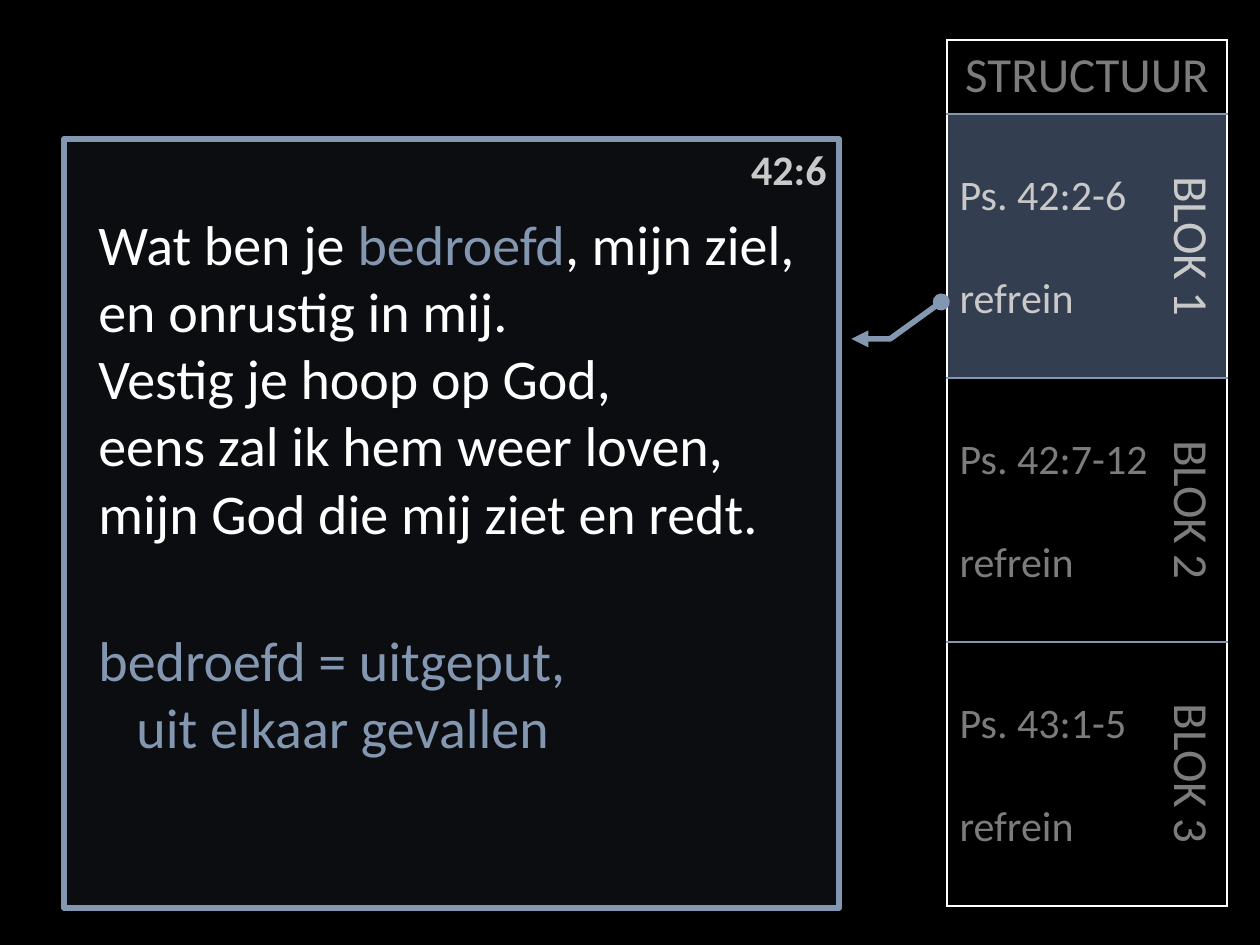
from dataclasses import dataclass
from typing import Optional

from lxml.etree import SubElement
from pptx import Presentation
from pptx.dml.color import RGBColor
from pptx.enum.shapes import MSO_SHAPE
from pptx.enum.text import MSO_ANCHOR, PP_ALIGN
from pptx.oxml.ns import qn
from pptx.util import Emu, Pt


@dataclass(frozen=True)
class Theme:
    font: str = "Calibri"
    back: str = "000000"
    white: str = "FFFFFF"
    blue: str = "8497B0"
    panel: str = "222A35"
    block: str = "333F50"
    light: str = "C9C9C9"
    dim: str = "7C7C7C"
    small: int = 24
    label: int = 28
    verse: int = 32
    rule: float = 1
    frame: float = 3.25


@dataclass(frozen=True)
class Box:
    left: int
    top: int
    width: int
    height: int

    def place(self) -> tuple:
        return px(self.left), px(self.top), px(self.width), px(self.height)


@dataclass(frozen=True)
class Line:
    words: tuple
    size: int
    color: str
    align: Optional[PP_ALIGN] = None
    bold: bool = False
    indent: int = 0
    gap: float = 0


@dataclass(frozen=True)
class Block:
    name: str
    psalm: str
    color: str
    fill: Optional[str] = None


THEME = Theme()
BLOCKS = (
    Block("BLOK 1", "Ps. 42:2-6", THEME.light, THEME.block),
    Block("BLOK 2", "Ps. 42:7-12", THEME.dim),
    Block("BLOK 3", "Ps. 43:1-5", THEME.dim),
)
VERSE = (
    ("Wat ben je ", ("bedroefd", THEME.blue), ", mijn ziel,"),
    ("en onrustig in mij.",),
    ("Vestig je hoop op God,",),
    ("eens zal ik hem weer loven,",),
    ("mijn God die mij ziet en redt.",),
)
HEAD, ROW = 74, 264
COLS = (223, 57)


def px(count: int) -> Emu:
    return Emu(round(count * 914400 / 126))


def rgb(code: str) -> RGBColor:
    return RGBColor.from_string(code)


def write(frame, lines: list[Line]) -> None:
    for i, line in enumerate(lines):
        para = frame.add_paragraph() if i else frame.paragraphs[0]
        if line.indent:
            para._p.get_or_add_pPr().set("marL", str(px(line.indent)))
        if line.align is not None:
            para.alignment = line.align
        if line.gap:
            para.space_before = Pt(line.gap)
        font = para.font
        font.name, font.size, font.bold = THEME.font, Pt(line.size), line.bold
        font.color.rgb = rgb(line.color)
        for word in line.words:
            run = para.add_run()
            if isinstance(word, tuple):
                run.text = word[0]
                run.font.color.rgb = rgb(word[1])
            else:
                run.text = word


def add_text(slide, box: Box, lines: list[Line]) -> None:
    frame = slide.shapes.add_textbox(*box.place()).text_frame
    frame.word_wrap = True
    write(frame, lines)


def style(cell, edges: dict, fill: Optional[str] = None) -> None:
    props = cell._tc.get_or_add_tcPr()
    for side in "LRTB":
        edge = SubElement(props, qn(f"a:ln{side}"), w=str(Pt(THEME.rule)))
        if side in edges:
            paint = SubElement(edge, qn("a:solidFill"))
            SubElement(paint, qn("a:srgbClr"), val=edges[side])
        else:
            SubElement(edge, qn("a:noFill"))
    if fill:
        cell.fill.solid()
        cell.fill.fore_color.rgb = rgb(fill)
    else:
        cell.fill.background()


def add_table(slide) -> None:
    box = Box(947, 40, sum(COLS), HEAD + ROW * len(BLOCKS))
    table = slide.shapes.add_table(len(BLOCKS) + 1, 2, *box.place()).table
    table.first_row = table.horz_banding = False
    for col, width in zip(table.columns, COLS):
        col.width = px(width)
    for i, row in enumerate(table.rows):
        row.height = px(ROW if i else HEAD)

    title = table.cell(0, 0)
    title.merge(table.cell(0, 1))
    write(title.text_frame, [Line(("STRUCTUUR",), THEME.label, THEME.dim, PP_ALIGN.CENTER)])
    ends = {"T": THEME.white, "B": THEME.blue}
    style(title, {"L": THEME.white, "R": THEME.white, **ends})
    style(table.cell(0, 1), {"R": THEME.white, **ends})

    for i, block in enumerate(BLOCKS, 1):
        last = i == len(BLOCKS)
        ends = {"T": THEME.blue, "B": THEME.white if last else THEME.blue}
        left, right = table.cell(i, 0), table.cell(i, 1)
        left.margin_top = px(57)
        write(left.text_frame, [
            Line((block.psalm,), THEME.small, block.color),
            Line(("refrein",), THEME.small, block.color, gap=29.3),
        ])
        style(left, {"L": THEME.white, **ends}, block.fill)
        right.vertical_anchor = MSO_ANCHOR.MIDDLE
        right._tc.get_or_add_tcPr().set("vert", "vert")
        write(right.text_frame, [Line((block.name,), THEME.label, block.color, PP_ALIGN.CENTER)])
        style(right, {"R": THEME.white, **ends}, block.fill)


def add_panel(slide) -> None:
    box = Box(64, 139, 775, 769)
    panel = slide.shapes.add_shape(MSO_SHAPE.LINE_CALLOUT_2, *box.place())
    panel.shadow.inherit = False
    for i, value in enumerate((0.26, 1.016, 0.26, 1.066, 0.212, 1.132)):
        panel.adjustments[i] = value
    panel.fill.solid()
    panel.fill.fore_color.rgb = rgb(THEME.panel)
    tint = panel._element.spPr.find(qn("a:solidFill"))[0]
    SubElement(tint, qn("a:alpha"), val="33000")
    panel.line.color.rgb = rgb(THEME.blue)
    panel.line.width = Pt(THEME.frame)
    edge = panel._element.spPr.find(qn("a:ln"))
    SubElement(edge, qn("a:headEnd"), type="triangle")
    SubElement(edge, qn("a:tailEnd"), type="oval")


def main() -> None:
    deck = Presentation()
    deck.slide_width, deck.slide_height = px(1260), px(945)
    slide = deck.slides.add_slide(deck.slide_layouts[6])
    slide.background.fill.solid()
    slide.background.fill.fore_color.rgb = rgb(THEME.back)
    add_table(slide)
    add_panel(slide)
    add_text(slide, Box(690, 137, 149, 63),
             [Line(("42:6",), THEME.small, THEME.light, PP_ALIGN.RIGHT, bold=True)])
    add_text(slide, Box(86, 203, 732, 352),
             [Line(words, THEME.verse, THEME.white) for words in VERSE])
    add_text(slide, Box(86, 619, 659, 149), [
        Line(("bedroefd = uitgeput,",), THEME.verse, THEME.blue),
        Line(("uit elkaar gevallen",), THEME.verse, THEME.blue, indent=38),
    ])
    deck.save("out.pptx")


if __name__ == "__main__":
    main()
